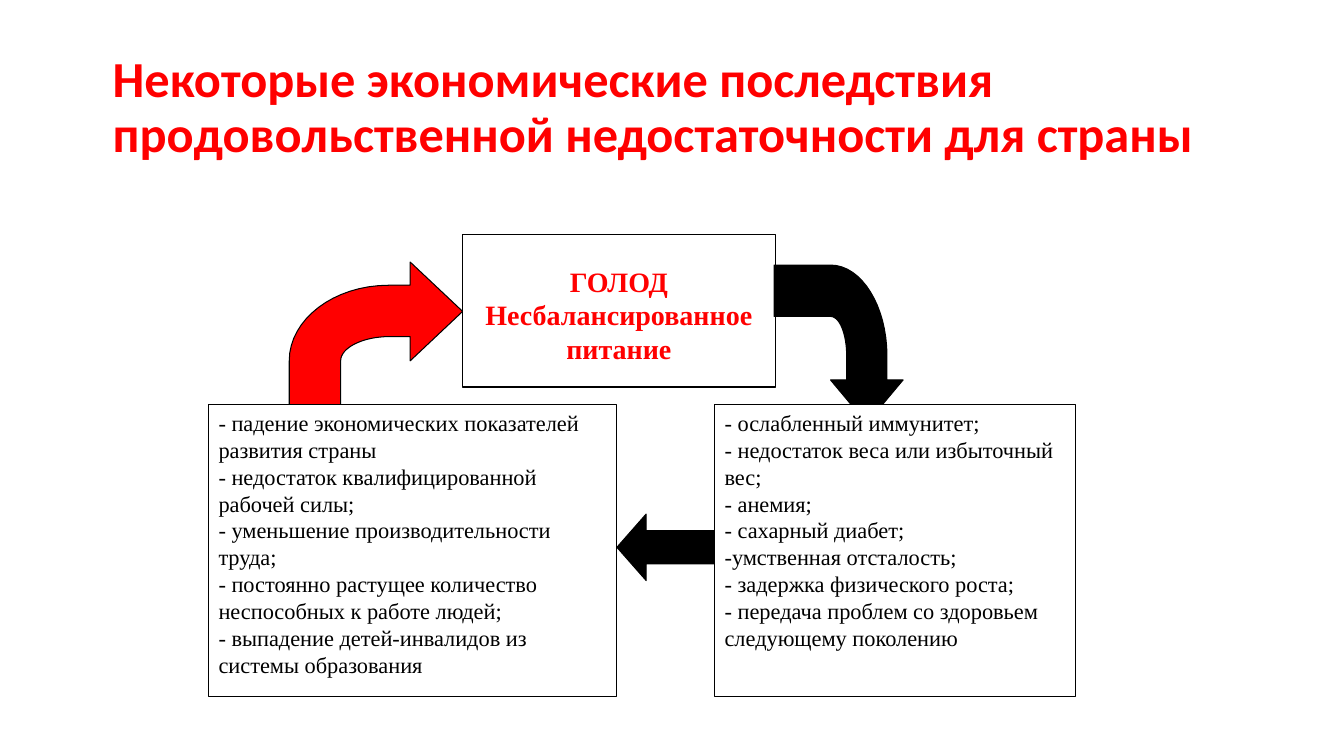
from pptx import Presentation
from pptx.dml.color import RGBColor
from pptx.enum.shapes import MSO_SHAPE
from pptx.enum.text import MSO_ANCHOR, PP_ALIGN
from pptx.util import Inches, Pt

WIDTH, HEIGHT = Inches(13.33), Inches(7.5)
COLUMNS, ROWS = 40, 22.5
RED, BLACK, WHITE = "FF0000", "000000", "FFFFFF"
SERIF = "Times New Roman"
CURVE_STEPS = 16

TITLE = "Некоторые экономические последствия продовольственной недостаточности для страны"
HUNGER = ["ГОЛОД", "Несбалансированное питание"]
HEALTH = [
    "- ослабленный иммунитет;",
    "- недостаток веса или избыточный вес;",
    "- анемия;",
    "- сахарный диабет;",
    "-умственная отсталость;",
    "- задержка физического роста;",
    "- передача проблем со здоровьем следующему поколению",
]
ECONOMY = [
    "- падение экономических показателей развития страны",
    "- недостаток квалифицированной рабочей силы;",
    "- уменьшение производительности труда;",
    "- постоянно растущее количество неспособных к работе людей;",
    "- выпадение детей-инвалидов из системы образования",
]

TO_HUNGER = [
    (13.77, 9.27), (12.21, 7.8), (12.21, 8.49), (11.58, 8.49),
    (9.93, 8.49, 8.61, 9.51, 8.61, 10.74),
    (8.61, 13.02), (10.14, 13.02), (10.14, 10.74),
    (10.14, 10.35, 10.8, 10.02, 11.58, 10.02),
    (12.21, 10.02), (12.21, 10.74),
]
TO_HEALTH = [
    (25.8, 12.6), (26.88, 11.31), (26.4, 11.31), (26.4, 10.59),
    (26.4, 9.12, 25.65, 7.89, 24.72, 7.89),
    (23.04, 7.89), (23.04, 9.42), (24.72, 9.42),
    (24.99, 9.42, 25.2, 9.93, 25.2, 10.59),
    (25.2, 11.31), (24.72, 11.31),
]


def color(hex_value):
    return RGBColor.from_string(hex_value)


def place(column, row):
    return round(WIDTH * column / COLUMNS), round(HEIGHT * row / ROWS)


def paint(shape, fill):
    shape.shadow.inherit = False
    shape.fill.solid()
    shape.fill.fore_color.rgb = color(fill)
    shape.line.color.rgb = color(BLACK)
    shape.line.width = Pt(0.75)


def write(frame, lines, size, font, ink, bold=False, align=PP_ALIGN.LEFT, spacing=1.0):
    frame.word_wrap = True
    for index, line in enumerate(lines):
        paragraph = frame.paragraphs[0] if index == 0 else frame.add_paragraph()
        paragraph.alignment = align
        paragraph.line_spacing = spacing
        run = paragraph.add_run()
        run.text = line
        run.font.size = Pt(size)
        run.font.name = font
        run.font.bold = bold
        run.font.color.rgb = color(ink)


def add_title(slide):
    title = slide.shapes.add_textbox(*place(3.06, 3.63), *place(34.5, 1.38))
    title.text_frame.vertical_anchor = MSO_ANCHOR.BOTTOM
    write(title.text_frame, [TITLE], 36, "Calibri", RED, bold=True, spacing=0.9)


def add_box(slide, corner, extent, lines, top_inset=0.05, **style):
    box = slide.shapes.add_shape(MSO_SHAPE.RECTANGLE, *place(*corner), *place(*extent))
    paint(box, WHITE)
    box.text_frame.vertical_anchor = MSO_ANCHOR.TOP
    box.text_frame.margin_top = Inches(top_inset)
    write(box.text_frame, lines, font=SERIF, **style)


def add_left_arrow(slide, corner, extent):
    arrow = slide.shapes.add_shape(MSO_SHAPE.LEFT_ARROW, *place(*corner), *place(*extent))
    arrow.adjustments[1] = 0.44
    paint(arrow, BLACK)


def curve_points(start, curve):
    anchors = [start, curve[:2], curve[2:4], curve[4:]]
    for step in range(1, CURVE_STEPS + 1):
        t = step / CURVE_STEPS
        weights = ((1 - t) ** 3, 3 * t * (1 - t) ** 2, 3 * t ** 2 * (1 - t), t ** 3)
        yield tuple(sum(w * a[axis] for w, a in zip(weights, anchors)) for axis in (0, 1))


def add_curved_arrow(slide, outline, fill):
    points = []
    for segment in outline:
        if len(segment) == 2:
            points.append(segment)
        else:
            points.extend(curve_points(points[-1], segment))
    tip, *rest = [place(*point) for point in points]
    builder = slide.shapes.build_freeform(*tip)
    builder.add_line_segments(rest, close=True)
    paint(builder.convert_to_shape(), fill)


def main():
    presentation = Presentation()
    presentation.slide_width, presentation.slide_height = WIDTH, HEIGHT
    slide = presentation.slides.add_slide(presentation.slide_layouts[6])

    add_title(slide)
    add_curved_arrow(slide, TO_HUNGER, RED)
    add_left_arrow(slide, (18.36, 15.3), (2.94, 1.98))
    add_box(slide, (13.77, 6.99), (9.3, 4.53), HUNGER, top_inset=0.29,
            size=20, ink=RED, bold=True, align=PP_ALIGN.CENTER)
    add_curved_arrow(slide, TO_HEALTH, BLACK)
    add_box(slide, (21.27, 12.03), (10.74, 8.7), HEALTH, size=16, ink=BLACK)
    add_box(slide, (6.21, 12.03), (12.15, 8.7), ECONOMY, size=16, ink=BLACK)

    presentation.save("out.pptx")


if __name__ == "__main__":
    main()
